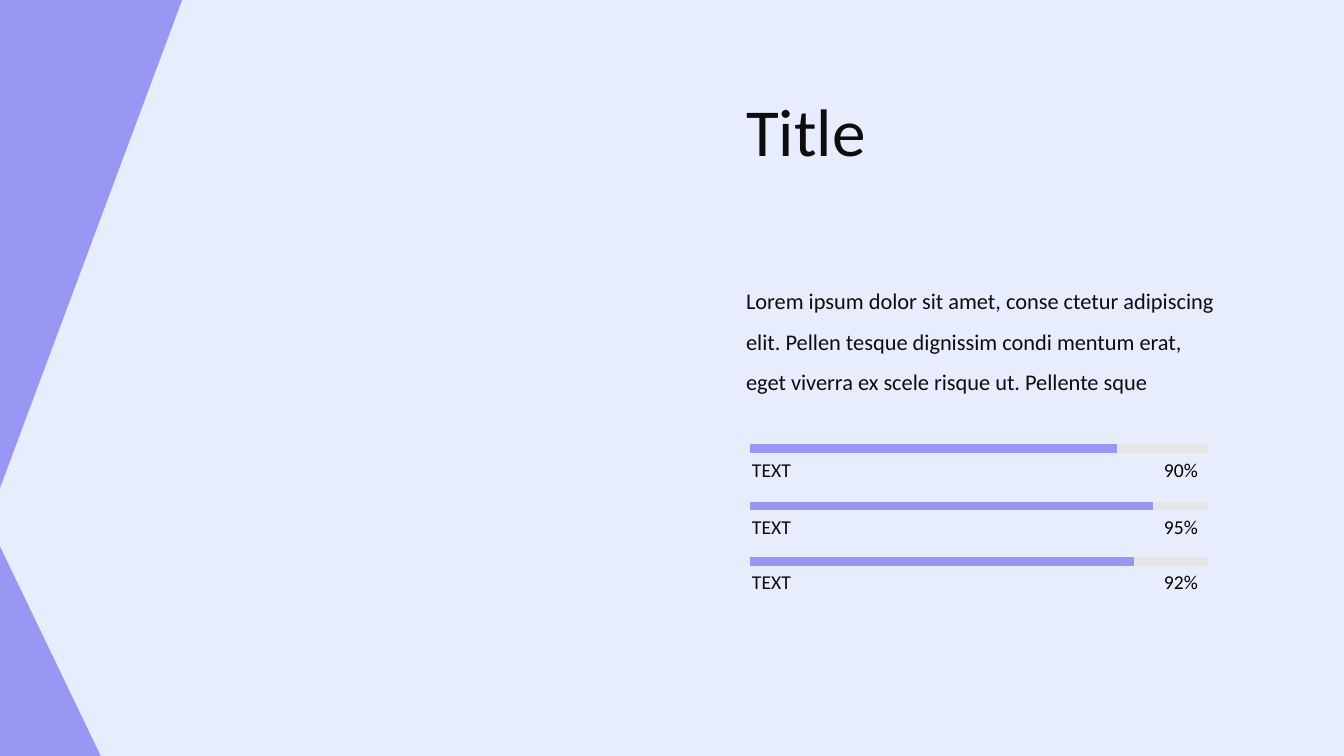
import lxml.etree
import pptx
import pptx.dml.color
import pptx.enum.shapes
import pptx.enum.text
import pptx.oxml.ns
import pptx.util

COLOURS = {
    "background": "E7EDFD",
    "accent": "9898F4",
    "track": "E7E6E6",
    "ink": "0D0D0D",
    "black": "000000",
}
FONT = "Calibri"
SCALE = 9144
WIDTH, HEIGHT = 1333, 750
ALIGN = pptx.enum.text.PP_ALIGN


def px(length):
    return pptx.util.Emu(length * SCALE)


def rgb(name):
    return pptx.dml.color.RGBColor.from_string(COLOURS[name])


def write(holder, text, size=14, colour="ink", align=ALIGN.LEFT, spacing=1.0):
    frame = holder.text_frame
    frame.word_wrap = True
    frame.auto_size = pptx.enum.text.MSO_AUTO_SIZE.SHAPE_TO_FIT_TEXT
    frame.vertical_anchor = pptx.enum.text.MSO_ANCHOR.TOP
    paragraph = frame.paragraphs[0]
    properties = paragraph._p.get_or_add_pPr()
    properties.set("marL", "0")
    properties.set("indent", "0")
    lxml.etree.SubElement(properties, pptx.oxml.ns.qn("a:buNone"))
    paragraph.alignment = align
    paragraph.line_spacing = spacing
    paragraph.space_before = pptx.util.Pt(0)
    run = paragraph.add_run()
    run.text = text
    run.font.name = FONT
    run.font.size = pptx.util.Pt(size)
    run.font.color.rgb = rgb(colour)


class Page:
    """Hold the slide and draw its elements in one style."""

    def __init__(self, deck):
        self.slide = deck.slides.add_slide(deck.slide_layouts[1])
        self.shapes = self.slide.shapes
        self.slide.background.fill.solid()
        self.slide.background.fill.fore_color.rgb = rgb("background")

    def corner(self, top, width, height, upside_down=False):
        triangle = self.shapes.add_shape(
            pptx.enum.shapes.MSO_SHAPE.RIGHT_TRIANGLE,
            px(0), px(top), px(width), px(height))
        triangle.shadow.inherit = False
        triangle.fill.solid()
        triangle.fill.fore_color.rgb = rgb("accent")
        triangle.line.fill.background()
        if upside_down:
            triangle.rotation = 180
            triangle._element.spPr.find(pptx.oxml.ns.qn("a:xfrm")).set("flipH", "1")

    def placeholder(self, index, left, top, width, height, text, **style):
        holder = self.slide.placeholders[index]
        holder.left, holder.top = px(left), px(top)
        holder.width, holder.height = px(width), px(height)
        write(holder, text, **style)

    def label(self, left, top, width, text, **style):
        write(self.shapes.add_textbox(px(left), px(top), px(width), px(37)), text, **style)

    def bar(self, left, top, length, colour):
        line = self.shapes.add_connector(
            pptx.enum.shapes.MSO_CONNECTOR.STRAIGHT,
            px(left), px(top), px(left + length), px(top))
        line.line.color.rgb = rgb(colour)
        line.line.width = pptx.util.Pt(6)
        lxml.etree.SubElement(line._element.spPr, pptx.oxml.ns.qn("a:effectLst"))

    def progress(self, top, length, percent):
        self.bar(744, top, 454, "track")
        self.bar(744, top, length, "accent")
        self.label(1125, top + 4, 73, percent, colour="black", align=ALIGN.RIGHT)
        self.label(736, top + 4, 119, "TEXT")


def main():
    deck = pptx.Presentation()
    deck.slide_width, deck.slide_height = px(WIDTH), px(HEIGHT)
    page = Page(deck)
    page.corner(542, 100, 208)
    page.corner(-1, 181, 485, upside_down=True)
    page.placeholder(0, 730, 84, 381, 91, "Title", size=48)
    page.placeholder(
        1, 730, 267, 486, 127,
        "Lorem ipsum dolor sit amet, conse ctetur adipiscing elit. "
        "Pellen tesque dignissim condi mentum erat, "
        "eget viverra ex scele risque ut. Pellente sque",
        size=16, spacing=1.5)
    for top, length, percent in ((445, 364, "90%"), (502, 400, "95%"), (557, 381, "92%")):
        page.progress(top, length, percent)
    deck.save("out.pptx")


if __name__ == "__main__":
    main()
